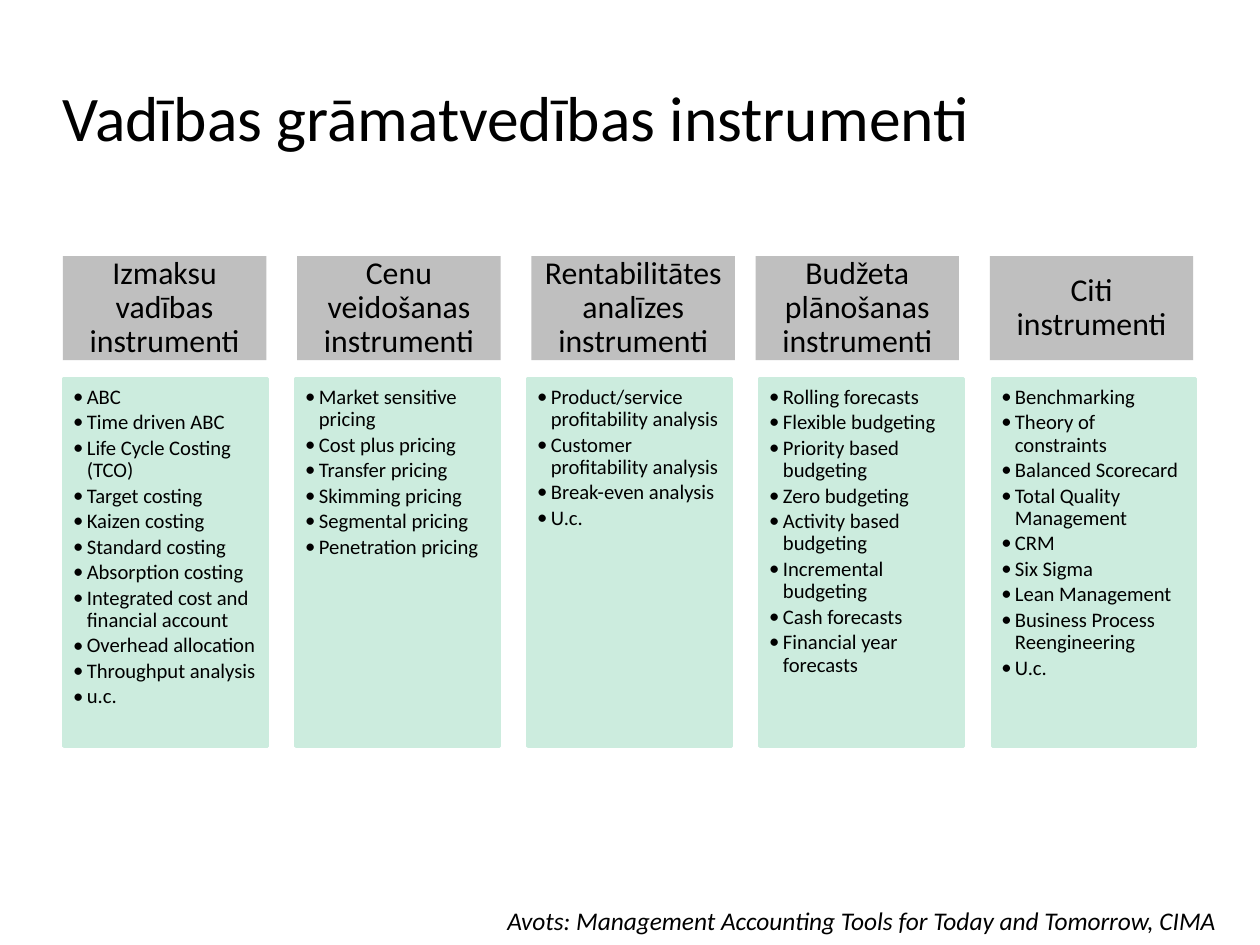
from lxml.etree import SubElement
from pptx import Presentation
from pptx.dml.color import RGBColor
from pptx.enum.shapes import MSO_SHAPE
from pptx.enum.text import MSO_ANCHOR, PP_ALIGN
from pptx.oxml.ns import qn
from pptx.util import Cm, Inches, Pt

TITLE = "Vadības grāmatvedības instrumenti"
SOURCE = "Avots: Management Accounting Tools for Today and Tomorrow, CIMA"
COLUMNS = [
    ("Izmaksu vadības instrumenti", [
        "ABC", "Time driven ABC", "Life Cycle Costing (TCO)", "Target costing",
        "Kaizen costing", "Standard costing", "Absorption costing",
        "Integrated cost and financial account", "Overhead allocation",
        "Throughput analysis", "u.c."]),
    ("Cenu veidošanas instrumenti", [
        "Market sensitive pricing", "Cost plus pricing", "Transfer pricing",
        "Skimming pricing", "Segmental pricing", "Penetration pricing"]),
    ("Rentabilitātes analīzes instrumenti", [
        "Product/service profitability analysis",
        "Customer profitability analysis", "Break-even analysis", "U.c."]),
    ("Budžeta plānošanas instrumenti", [
        "Rolling forecasts", "Flexible budgeting", "Priority based budgeting",
        "Zero budgeting", "Activity based budgeting", "Incremental budgeting",
        "Cash forecasts", "Financial year forecasts"]),
    ("Citi instrumenti", [
        "Benchmarking", "Theory of constraints", "Balanced Scorecard",
        "Total Quality Management", "CRM", "Six Sigma", "Lean Management",
        "Business Process Reengineering", "U.c."]),
]

SLIDE_W, SLIDE_H = Cm(28), Cm(21)
COL_W = 1.78
HEAD_LEFT, HEAD_PITCH, HEAD_TOP, HEAD_H = 0.55, 2.05, 2.24, 0.91
LIST_LEFT, LIST_PITCH, LIST_TOP, LIST_H = 0.56, 2.03, 3.31, 3.22
HEAD_SHIFT = (0, 0, 0, -0.09, -0.09)
BLACK, GREY, GREEN = "000000", "BFBFBF", "CCECDE"
HEAD = dict(size=20, align=PP_ALIGN.CENTER, spacing=0.9)
ITEM = dict(size=13, spacing=0.9, after=2, indent=0.12)


def color(value):
    return RGBColor.from_string(value)


def frame(sp, insets, anchor=MSO_ANCHOR.TOP):
    tf = sp.text_frame
    sides = ("margin_left", "margin_top", "margin_right", "margin_bottom")
    values = dict(zip(sides, map(Inches, insets)))
    for name, value in {**values, "word_wrap": True, "vertical_anchor": anchor}.items():
        setattr(tf, name, value)
    return tf


def bullet(p, indent):
    pPr = p._p.get_or_add_pPr()
    pPr.set("marL", str(Inches(indent)))
    pPr.set("indent", str(-Inches(indent)))
    SubElement(SubElement(pPr, qn("a:buClr")), qn("a:srgbClr"), val=BLACK)
    SubElement(pPr, qn("a:buFont"), typeface="Calibri")
    SubElement(pPr, qn("a:buChar"), char="•")


def write(tf, lines, size, align=PP_ALIGN.LEFT, spacing=1.0, after=0, indent=0, italic=False):
    for i, line in enumerate(lines):
        p = tf.add_paragraph() if i else tf.paragraphs[0]
        if indent:
            bullet(p, indent)
        layout = dict(alignment=align, line_spacing=spacing,
                      space_before=Pt(0), space_after=Pt(after))
        for name, value in layout.items():
            setattr(p, name, value)
        r = p.add_run()
        r.text = line
        for name, value in dict(name="Calibri", size=Pt(size), italic=italic).items():
            setattr(r.font, name, value)
        r.font.color.rgb = color(BLACK)


def box(slide, x, y, h, fill):
    sp = slide.shapes.add_shape(MSO_SHAPE.RECTANGLE, *map(Inches, (x, y, COL_W, h)))
    sp.shadow.inherit = False
    sp.fill.solid()
    sp.fill.fore_color.rgb = color(fill)
    sp.line.fill.background()
    return sp


def list_box(slide, x):
    sp = box(slide, x, LIST_TOP, LIST_H, GREEN)
    sp.line.color.rgb = color(GREEN)
    sp.line.width = Pt(2)
    return sp


def main():
    prs = Presentation()
    prs.slide_width, prs.slide_height = SLIDE_W, SLIDE_H
    slide = prs.slides.add_slide(prs.slide_layouts[5])

    title = slide.shapes.title
    place = dict(left=0.55, top=0.33, width=9.92, height=1.38)
    for name, value in place.items():
        setattr(title, name, Inches(value))
    write(frame(title, (0, 0, 0, 0), MSO_ANCHOR.MIDDLE), [TITLE], 40)

    for i, (heading, items) in enumerate(COLUMNS):
        sp = box(slide, HEAD_LEFT + i * HEAD_PITCH + HEAD_SHIFT[i], HEAD_TOP, HEAD_H, GREY)
        write(frame(sp, (0.1, 0.06, 0.1, 0.06), MSO_ANCHOR.MIDDLE), [heading], **HEAD)
        sp = list_box(slide, LIST_LEFT + i * LIST_PITCH)
        write(frame(sp, (0.08, 0.07, 0.1, 0.11)), items, **ITEM)

    source = slide.shapes.add_textbox(*map(Inches, (4.33, 7.88, 6.69, 0.36)))
    write(frame(source, (0.11, 0.06, 0.11, 0.06)), [SOURCE], 16, spacing=0.93, italic=True)
    prs.save("out.pptx")


if __name__ == "__main__":
    main()
